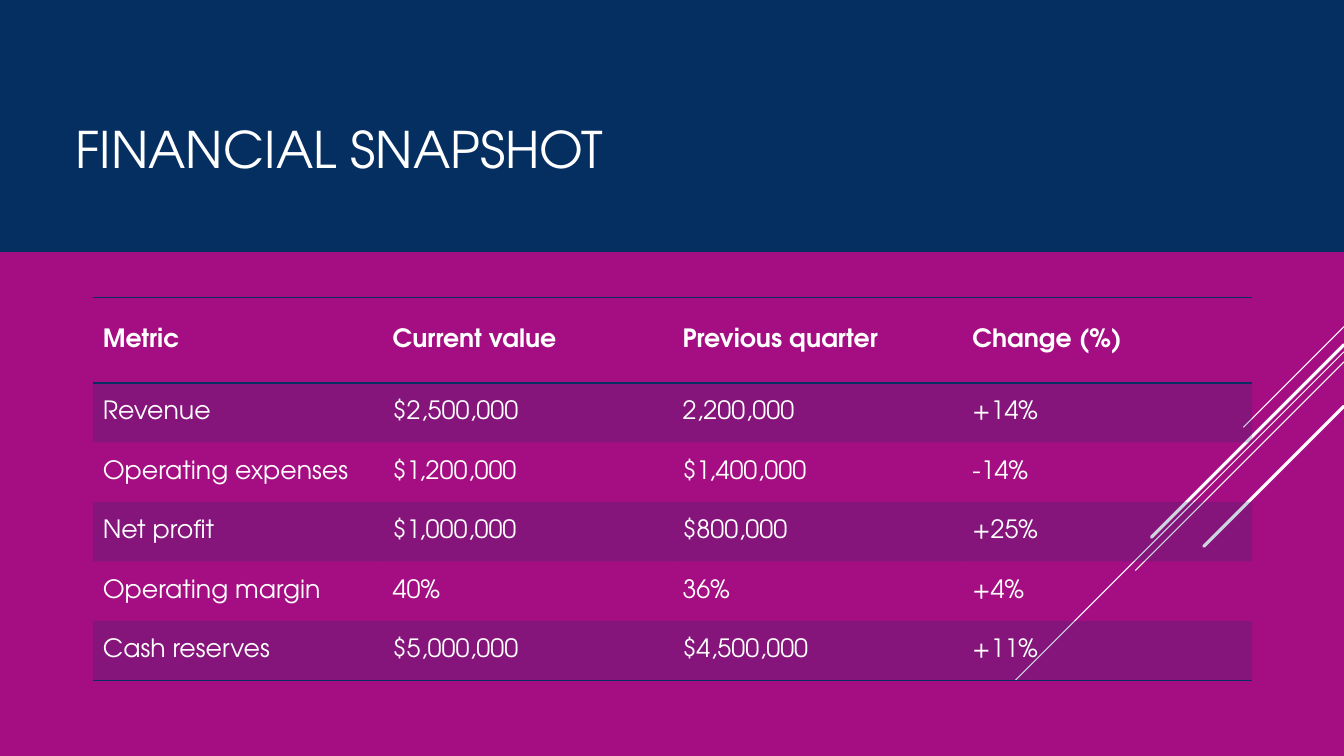
from dataclasses import dataclass

from lxml import etree
from pptx import Presentation
from pptx.dml.color import RGBColor
from pptx.enum.text import MSO_ANCHOR
from pptx.enum.shapes import MSO_CONNECTOR, MSO_SHAPE
from pptx.oxml.ns import qn
from pptx.util import Inches, Pt

MIDDLE = MSO_ANCHOR.MIDDLE
STRAIGHT = MSO_CONNECTOR.STRAIGHT
RECTANGLE = MSO_SHAPE.RECTANGLE

SLIDE_WIDTH, SLIDE_HEIGHT = 13.33, 7.5
HEADER_HEIGHT, ROW_HEIGHT = 0.85, 0.59
STREAKS = [(3.24, 1, 0.75), (3.49, 3.26, 0.75), (3.59, 2.07, 0.75),
           (3.42, 1.91, 2.25), (4.03, 1.39, 2.25)]
METRICS = [
    ("Metric", "Current value", "Previous quarter", "Change (%)"),
    ("Revenue", "$2,500,000", "2,200,000", "+14%"),
    ("Operating expenses", "$1,200,000", "$1,400,000", "-14%"),
    ("Net profit", "$1,000,000", "$800,000", "+25%"),
    ("Operating margin", "40%", "36%", "+4%"),
    ("Cash reserves", "$5,000,000", "$4,500,000", "+11%"),
]


@dataclass
class Theme:
    """Colours, font and type sizes of the deck."""
    navy: str = "052F61"
    magenta: str = "A50E82"
    white: str = "FFFFFF"
    font: str = "TeX Gyre Adventor"
    title_size: int = 36
    table_size: int = 18
    band_alpha: int = 20


class SlideBuilder:
    """Draws styled elements on one slide."""

    def __init__(self, slide, theme):
        """Keep the slide and theme, and paint the background."""
        self.slide = slide
        self.theme = theme
        slide.background.fill.solid()
        slide.background.fill.fore_color.rgb = RGBColor.from_string(theme.magenta)

    def style_text(self, frame, size, bold=False):
        """Format every run of a text frame."""
        for paragraph in frame.paragraphs:
            for span in paragraph.runs:
                span.font.name = self.theme.font
                span.font.size = Pt(size)
                span.font.bold = bold
                span.font.color.rgb = RGBColor.from_string(self.theme.white)

    def streak(self, top, run, weight):
        """Draw a diagonal line falling from the right edge at 45 degrees."""
        line = self.slide.shapes.add_connector(
            STRAIGHT, Inches(SLIDE_WIDTH), Inches(top),
            Inches(SLIDE_WIDTH - run), Inches(top + run))
        line.line.color.rgb = RGBColor.from_string(self.theme.white)
        line.line.width = Pt(weight)
        properties = line._element.spPr
        if weight > 1:
            properties.find(qn("a:ln")).set("cap", "rnd")
        etree.SubElement(properties, qn("a:effectLst"))

    def banner(self, height):
        """Draw the band across the top of the slide."""
        box = self.slide.shapes.add_shape(
            RECTANGLE, 0, 0, Inches(SLIDE_WIDTH), Inches(height))
        box.shadow.inherit = False
        box.fill.solid()
        box.fill.fore_color.rgb = RGBColor.from_string(self.theme.navy)
        box.line.fill.background()

    def title(self, text, left, top, width, height):
        """Write the slide title."""
        box = self.slide.shapes.add_textbox(
            Inches(left), Inches(top), Inches(width), Inches(height))
        frame = box.text_frame
        frame.word_wrap = True
        frame.vertical_anchor = MIDDLE
        frame.margin_left = frame.margin_right = 0
        frame.margin_top = frame.margin_bottom = 0
        frame.text = text
        self.style_text(frame, self.theme.title_size)

    def borders(self, cell, visible):
        """Rule the visible sides of a cell and clear the others."""
        properties = cell._tc.get_or_add_tcPr()
        for side in "LRTB":
            border = etree.SubElement(properties, qn(f"a:ln{side}"))
            if side in visible:
                border.set("w", str(Pt(1)))
                fill = etree.SubElement(border, qn("a:solidFill"))
                etree.SubElement(fill, qn("a:srgbClr"), val=self.theme.navy)
            else:
                etree.SubElement(border, qn("a:noFill"))

    def cell_fill(self, cell, banded):
        """Tint a banded cell and leave any other one clear."""
        if not banded:
            cell.fill.background()
            return
        cell.fill.solid()
        cell.fill.fore_color.rgb = RGBColor.from_string(self.theme.navy)
        color = cell._tc.tcPr.find(qn("a:solidFill")).find(qn("a:srgbClr"))
        etree.SubElement(color, qn("a:alpha"), val=str(self.theme.band_alpha * 1000))

    def table(self, rows, left, top, width):
        """Draw a banded table whose first row is the header."""
        last = len(rows) - 1
        height = HEADER_HEIGHT + last * ROW_HEIGHT
        table = self.slide.shapes.add_table(
            len(rows), len(rows[0]), Inches(left), Inches(top),
            Inches(width), Inches(height)).table
        table.horz_banding = False
        for row_index, values in enumerate(rows):
            header = row_index == 0
            table.rows[row_index].height = Inches(HEADER_HEIGHT if header else ROW_HEIGHT)
            visible = {0: "TB", 1: "T", last: "B"}.get(row_index, "")
            for column_index, value in enumerate(values):
                cell = table.cell(row_index, column_index)
                cell.vertical_anchor = MIDDLE
                cell.text_frame.text = value
                self.style_text(cell.text_frame, self.theme.table_size, header)
                self.borders(cell, visible)
                self.cell_fill(cell, row_index % 2 == 1)


def main():
    """Build the financial snapshot slide and save it."""
    deck = Presentation()
    deck.slide_width = Inches(SLIDE_WIDTH)
    deck.slide_height = Inches(SLIDE_HEIGHT)
    page = SlideBuilder(deck.slides.add_slide(deck.slide_layouts[6]), Theme())
    for top, run, weight in STREAKS:
        page.streak(top, run, weight)
    page.banner(2.5)
    page.title("FINANCIAL SNAPSHOT", 0.75, 0.75, 11, 1.44)
    page.table(METRICS, 0.92, 2.95, 11.5)
    deck.save("out.pptx")


if __name__ == "__main__":
    main()
